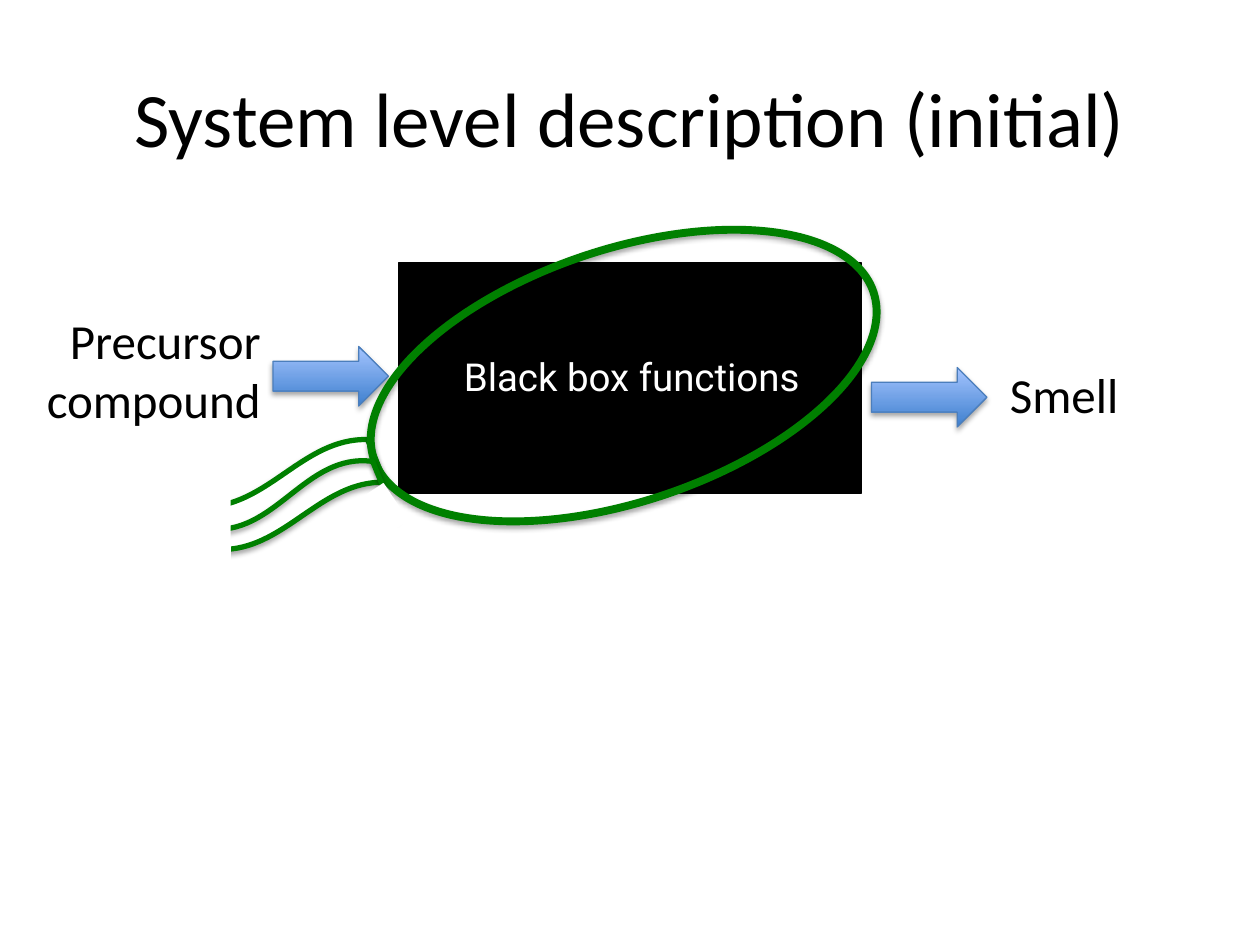
from dataclasses import dataclass
from typing import Optional

from lxml import etree
from pptx import Presentation
from pptx.dml.color import RGBColor
from pptx.enum.shapes import MSO_SHAPE
from pptx.enum.text import MSO_ANCHOR, MSO_AUTO_SIZE, PP_ALIGN
from pptx.oxml.ns import qn
from pptx.util import Pt

RECT, OVAL = MSO_SHAPE.RECTANGLE, MSO_SHAPE.OVAL
ARROW, WAVE = MSO_SHAPE.RIGHT_ARROW, MSO_SHAPE.WAVE
LEFT, MID, RIGHT = PP_ALIGN.LEFT, PP_ALIGN.CENTER, PP_ALIGN.RIGHT
TOP, CENTER = MSO_ANCHOR.TOP, MSO_ANCHOR.MIDDLE
GROW, FIXED = MSO_AUTO_SIZE.SHAPE_TO_FIT_TEXT, MSO_AUTO_SIZE.NONE

BLACK, WHITE, GREEN = "000000", "FFFFFF", "008000"
BLUE, PALE, EDGE = "3F80CE", "A4C4FF", "4B7EBC"
TILT = 337.9


@dataclass
class Label:
    text: str
    box: tuple[float, float, float, float]
    size: float
    color: str = BLACK
    font: str = "Calibri"
    align: PP_ALIGN = LEFT
    anchor: MSO_ANCHOR = TOP
    fit: MSO_AUTO_SIZE = GROW


@dataclass
class Form:
    kind: MSO_SHAPE
    box: tuple[float, float, float, float]
    fill: Optional[str] = None
    line: Optional[str] = None
    width: float = 0.75
    turn: float = 0
    shade: bool = False


def paint(color, code: str) -> None:
    color.rgb = RGBColor.from_string(code)


def add_shade(shape) -> None:
    effects = shape._element.spPr.find(qn("a:effectLst"))
    outer = etree.SubElement(
        effects, qn("a:outerShdw"), blurRad=str(Pt(3.1)), dist=str(Pt(1.8)),
        dir="5400000", rotWithShape="0")
    tone = etree.SubElement(outer, qn("a:srgbClr"), val=BLACK)
    etree.SubElement(tone, qn("a:alpha"), val="35000")


def draw_form(slide, form: Form):
    shape = slide.shapes.add_shape(form.kind, *map(Pt, form.box))
    shape.rotation = form.turn
    shape.shadow.inherit = False
    if form.fill:
        shape.fill.solid()
        paint(shape.fill.fore_color, form.fill)
    else:
        shape.fill.background()
    if form.line:
        paint(shape.line.color, form.line)
        shape.line.width = Pt(form.width)
    else:
        shape.line.fill.background()
    if form.shade:
        add_shade(shape)
    return shape


def draw_arrow(slide, left: float, top: float) -> None:
    shape = draw_form(slide, Form(ARROW, (left, top, 66, 34), line=EDGE, shade=True))
    shape.fill.gradient()
    shape.fill.gradient_angle = 90
    for stop, place, code in zip(shape.fill.gradient_stops, (0, 1), (BLUE, PALE)):
        stop.position = place
        paint(stop.color, code)


def draw_wave(slide, box: tuple[float, float, float, float],
              fill: Optional[str] = None) -> None:
    shape = draw_form(slide, Form(WAVE, box, fill, GREEN, 3, TILT, True))
    shape.adjustments[0] = 0.127
    shape.adjustments[1] = 0
    shape._element.spPr.find(qn("a:xfrm")).set("flipV", "1")


def draw_label(slide, label: Label) -> None:
    frame = slide.shapes.add_textbox(*map(Pt, label.box)).text_frame
    frame.word_wrap = True
    frame.auto_size = label.fit
    frame.vertical_anchor = label.anchor
    para = frame.paragraphs[0]
    para.text = label.text
    para.alignment = label.align
    para.font.size = Pt(label.size)
    para.font.name = label.font
    paint(para.font.color, label.color)


COVERS = [
    Form(RECT, (77.8, 282.2, 54, 36), WHITE),
    Form(RECT, (115.9, 311.8, 15.8, 30.2), WHITE, WHITE),
    Form(RECT, (116.6, 307.4, 119.5, 25.2), WHITE, WHITE, turn=326.3),
    Form(RECT, (126, 324, 12, 12), WHITE, WHITE),
]


def main() -> None:
    deck = Presentation()
    deck.slide_width, deck.slide_height = Pt(720), Pt(540)
    slide = deck.slides.add_slide(deck.slide_layouts[6])

    draw_label(slide, Label("System level description (initial)", (36, 21.6, 648, 90),
                            44, align=MID, anchor=CENTER, fit=FIXED))
    draw_form(slide, Form(RECT, (228, 150, 264, 132), BLACK, BLACK))
    draw_label(slide, Label("Black box functions", (258, 198, 246, 34), 22,
                            WHITE, "Roboto"))
    draw_arrow(slide, 156, 198)
    draw_label(slide, Label("Precursor compound", (0, 174, 156, 75), 28, align=RIGHT))
    draw_arrow(slide, 498, 210)
    draw_label(slide, Label("Smell", (570, 204.5, 132, 41), 28))

    draw_wave(slide, (116.6, 265, 102.2, 35.3), WHITE)
    draw_form(slide, Form(OVAL, (205.9, 142.6, 301, 144), None, GREEN, 4.5, 341.5, True))
    draw_wave(slide, (121, 275.8, 102.2, 46.1))
    for cover in COVERS:
        draw_form(slide, cover)

    deck.save("out.pptx")


if __name__ == "__main__":
    main()
